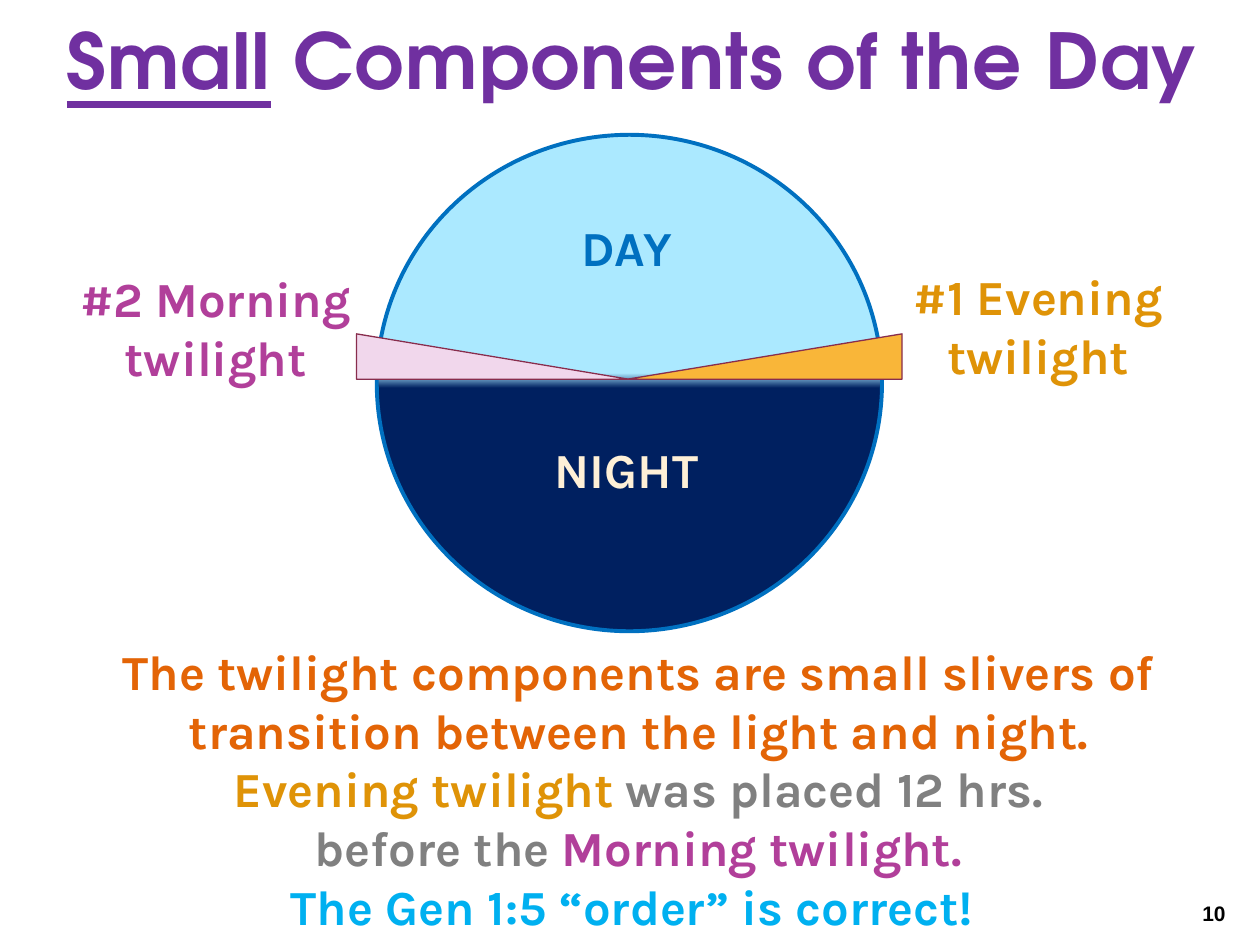
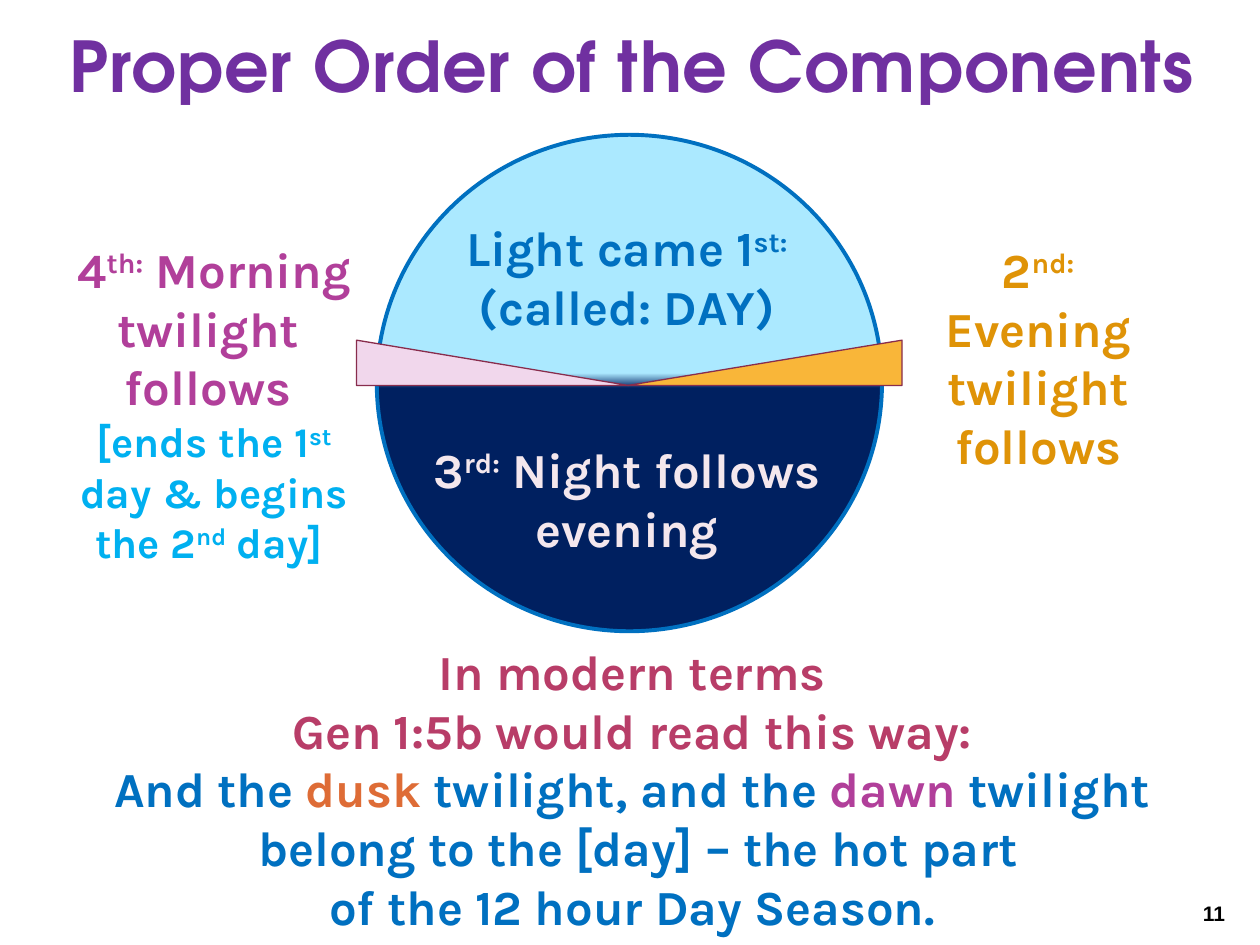
from pptx import Presentation
from pptx.dml.color import RGBColor
from pptx.enum.shapes import MSO_SHAPE
from pptx.enum.text import MSO_ANCHOR, MSO_AUTO_SIZE, PP_ALIGN
from pptx.oxml import parse_xml
from pptx.oxml.ns import nsdecls, qn
from pptx.util import Inches, Pt

COLORS = {
    "title": "7030A0", "black": "000000", "gray": "808080",
    "day": "ABE9FF", "night": "002060", "blue": "0070C0", "sky": "00B0F0",
    "morning": "B13F9A", "morning_fill": "F1D7EC",
    "evening": "DF9307", "evening_fill": "F9B639", "wedge_line": "882D4D",
    "orange": "E36406", "dusk": "DE6C36", "rose": "B83D68",
    "cream": "FEF0D7", "blush": "F4E7ED",
}
TITLE_FONT, BODY_FONT, NUMBER_FONT = "TeX Gyre Adventor", "Karla", "Arial"
TITLE_ONLY = 5


def rgb(name):
    return RGBColor.from_string(COLORS[name])


class Deck:
    """Holds the shared style and the slide being built."""

    def __init__(self):
        self.prs = Presentation()
        self.prs.slide_width, self.prs.slide_height = Inches(10), Inches(7.5)
        self.s = None

    def new_slide(self, number):
        self.s = self.prs.slides.add_slide(self.prs.slide_layouts[TITLE_ONLY])
        sp = self.text(9.4, 7.05, 0.47, 0.4, [[(str(number), "black")]], 12, NUMBER_FONT)
        sp.text_frame.vertical_anchor = MSO_ANCHOR.MIDDLE

    def place(self, sp, left, top, width, height):
        sp.left, sp.top = Inches(left), Inches(top)
        sp.width, sp.height = Inches(width), Inches(height)

    def title(self, top, height, size, text, underlined=""):
        sp = self.s.shapes.title
        self.place(sp, 0.35, top, 9.34, height)
        tf = sp.text_frame
        tf.auto_size = MSO_AUTO_SIZE.NONE
        tf.vertical_anchor = MSO_ANCHOR.TOP
        p = tf.paragraphs[0]
        self.style(p, size, TITLE_FONT)
        for part in filter(None, (underlined, text)):
            r = p.add_run()
            r.text = part
            r.font.color.rgb = rgb("title")
            r.font.underline = part == underlined
            r.font._element.set("spc", "50")

    def style(self, p, size, font):
        p.alignment = PP_ALIGN.CENTER
        p.font.size, p.font.name, p.font.bold = Pt(size), font, True

    def text(self, left, top, width, height, paragraphs, size=28, font=BODY_FONT):
        """Add centred text; each paragraph is a list of (text, colour[, size])."""
        sp = self.s.shapes.add_textbox(*map(Inches, (left, top, width, height)))
        tf = sp.text_frame
        tf.word_wrap = True
        for i, parts in enumerate(paragraphs):
            p = tf.add_paragraph() if i else tf.paragraphs[0]
            self.style(p, size, font)
            for part in parts:
                self.runs(p, *part)
        return sp

    def runs(self, p, text, color, size=None):
        """Add runs; ^ marks start and end a superscript, \\n breaks the line."""
        for i, piece in enumerate(text.split("^")):
            for j, line in enumerate(piece.split("\n")):
                if j:
                    p.add_line_break()
                if not line:
                    continue
                r = p.add_run()
                r.text = line
                r.font.color.rgb = rgb(color)
                if size:
                    r.font.size = Pt(size)
                if i % 2:
                    r.font._element.set("baseline", "30000")

    def outline_text(self, sp, color, width):
        for p in sp.text_frame.paragraphs:
            for r in p.runs:
                r.font._element.insert(0, parse_xml(
                    f'<a:ln {nsdecls("a")} w="{Pt(width)}"><a:solidFill>'
                    f'<a:srgbClr val="{COLORS[color]}"/></a:solidFill></a:ln>'))

    def shape(self, kind, left, top, width, height, line, weight):
        sp = self.s.shapes.add_shape(kind, *map(Inches, (left, top, width, height)))
        sp.shadow.inherit = False
        sp.line.color.rgb = rgb(line)
        sp.line.width = Pt(weight)
        return sp

    def wedge(self, left, top, width, fill, flip=False):
        sp = self.shape(MSO_SHAPE.RIGHT_TRIANGLE, left, top, width, 0.36, "wedge_line", 0.75)
        sp.fill.solid()
        sp.fill.fore_color.rgb = rgb(fill)
        if flip:
            sp._element.spPr.find(qn("a:xfrm")).set("flipH", "1")

    def day_circle(self, twilight_top):
        """Draw the day and night circle with its two twilight wedges."""
        sp = self.shape(MSO_SHAPE.OVAL, 2.99, 1.07, 4.01, 3.94, "blue", 2.25)
        sp.fill.gradient()
        sp.fill.gradient_angle = 270
        for stop, (position, color) in zip(sp.fill.gradient_stops,
                                           ((0.48, "day"), (0.51, "night"))):
            stop.position = position
            stop.color.rgb = rgb(color)
        self.wedge(2.83, twilight_top, 2.16, "morning_fill")
        self.wedge(4.98, twilight_top, 2.18, "evening_fill", flip=True)

    def message(self, paragraphs):
        self.text(0.09, 5.04, 9.95, 2.46, paragraphs)


def small_components(deck):
    deck.new_slide(10)
    deck.title(0.05, 1, 44, " Components of the Day", underlined="Small")
    deck.message([
        [("The twilight components are small slivers of transition "
          "between the light and night.", "orange")],
        [("Evening twilight ", "evening"),
         ("was placed 12 hrs.\nbefore the ", "gray"),
         ("Morning twilight.", "morning")],
        [("The Gen 1:5 “order” is correct! ", "sky")],
    ])
    deck.day_circle(2.65)
    deck.text(3.19, 1.68, 3.57, 0.57, [[("DAY", "blue")]])
    deck.text(3.37, 3.44, 3.2, 0.57, [[("NIGHT", "cream")]])
    deck.text(6.73, 2.07, 3.02, 1.04, [[("#1 Evening", "evening")], [("twilight", "evening")]])
    deck.text(0.2, 2.08, 3.02, 1.04, [[("#2 Morning\ntwilight", "morning")]])


def proper_order(deck):
    deck.new_slide(11)
    deck.title(0.13, 0.87, 40, "Proper Order of the Components")
    deck.message([[
        ("In modern terms \nGen 1:5b would read this way: \n", "rose"),
        ("And the ", "blue"), ("dusk", "dusk"), (" twilight, and the ", "blue"),
        ("dawn", "morning"),
        (" twilight \nbelong to the [day] – the hot part\n"
         "of the 12 hour Day Season. ", "blue"),
    ]])
    deck.day_circle(2.7)
    deck.text(3.19, 1.68, 3.57, 1.04, [[("Light came 1^st:^\n(called: DAY)", "blue")]])
    night = deck.text(3.19, 3.44, 3.57, 1.04,
                      [[("3^rd:^ Night follows", "blush")], [("evening", "blush")]])
    deck.outline_text(night, "day", 0.9)
    deck.text(7.16, 1.85, 2.16, 1.99, [[("2^nd:^ Evening twilight follows", "evening")]])
    deck.text(0.35, 1.85, 2.7, 2.73, [[
        ("4^th:^ Morning twilight \nfollows \n", "morning"),
        ("[ends the 1^st^ day & begins the 2^nd^ day] ", "sky", 24),
    ]])


def main():
    deck = Deck()
    small_components(deck)
    proper_order(deck)
    deck.prs.save("out.pptx")


if __name__ == "__main__":
    main()
